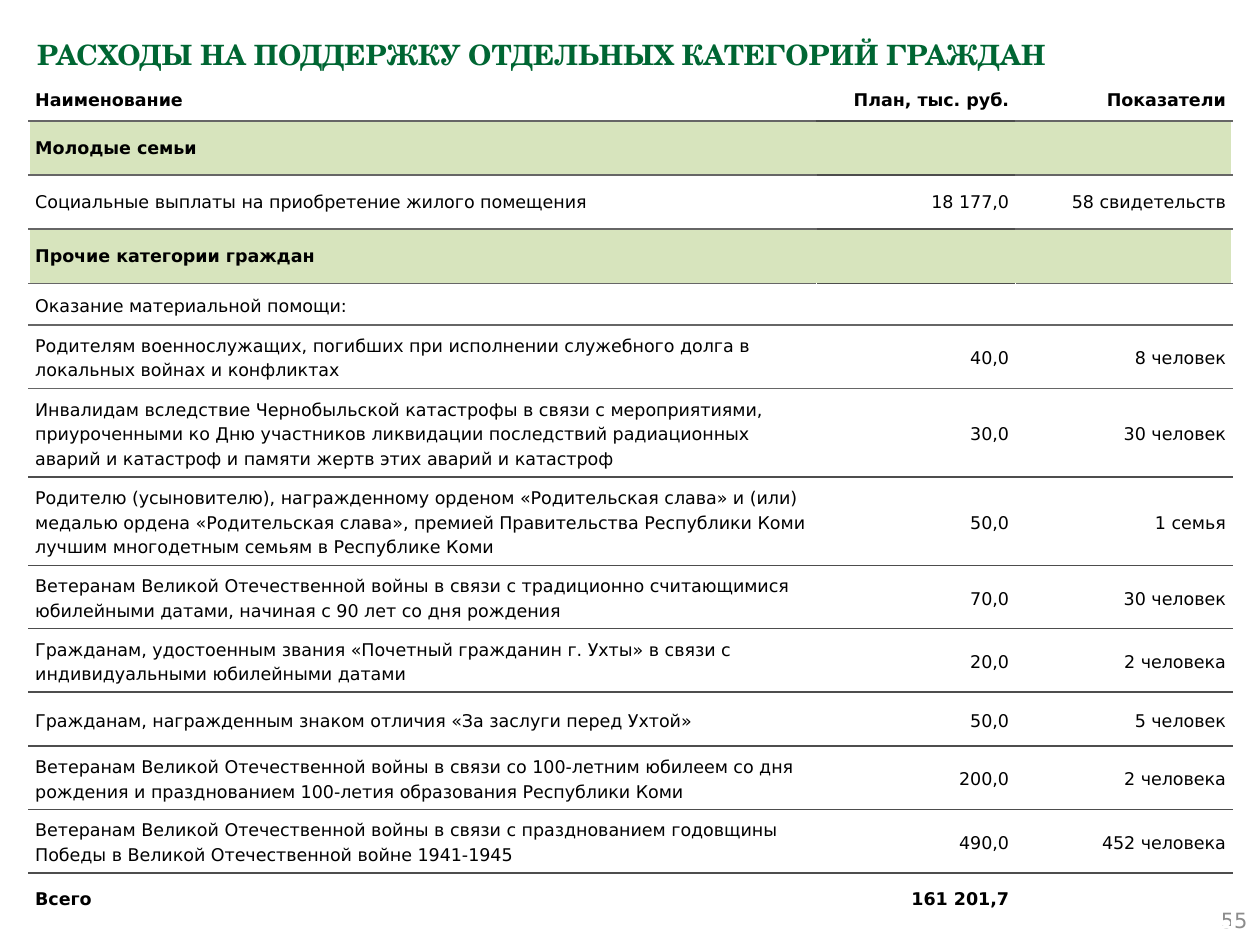
from dataclasses import dataclass
from typing import Optional

import pptx
import pptx.dml.color
import pptx.enum.text
import pptx.util
from lxml import etree
from pptx.oxml.ns import qn

Cm, Pt = pptx.util.Cm, pptx.util.Pt
ALIGN, ANCHOR = pptx.enum.text.PP_ALIGN, pptx.enum.text.MSO_ANCHOR


@dataclass(frozen=True)
class Theme:
    title_font: str = "TeX Gyre Schola"
    body_font: str = "DejaVu Sans"
    title_size: int = 16
    body_size: int = 10
    number_size: int = 12
    green: str = "006633"
    black: str = "000000"
    number: str = "8C8C8C"
    section: str = "D7E4BD"
    white: str = "FFFFFF"
    rule: str = "666666"
    dark_rule: str = "4D4D4D"
    spacing: float = 1.2


@dataclass(frozen=True)
class Row:
    name: str
    plan: str = ""
    result: str = ""
    height: float = 1.09
    kind: str = "item"  # header, section, item, aid or total


THEME = Theme()
TWO_LINES, THREE_LINES = 1.24, 1.73
COLUMNS = (15.88, 4.01, 4.37)
ROWS = (
    Row("Наименование", "План, тыс. руб.", "Показатели", 0.74, "header"),
    Row("Молодые семьи", kind="section"),
    Row("Социальные выплаты на приобретение жилого помещения",
        "18 177,0", "58 свидетельств"),
    Row("Прочие категории граждан", kind="section"),
    Row("Оказание материальной помощи:", height=0.84, kind="aid"),
    Row("Родителям военнослужащих, погибших при исполнении служебного долга в "
        "локальных войнах и конфликтах",
        "40,0", "8 человек", TWO_LINES, "aid"),
    Row("Инвалидам вследствие Чернобыльской катастрофы в связи с мероприятиями, "
        "приуроченными ко Дню участников ликвидации последствий радиационных "
        "аварий и катастроф и памяти жертв этих аварий и катастроф",
        "30,0", "30 человек", THREE_LINES, "aid"),
    Row("Родителю (усыновителю), награжденному орденом «Родительская слава» и (или) "
        "медалью ордена «Родительская слава», премией Правительства Республики Коми "
        "лучшим многодетным семьям в Республике Коми",
        "50,0", "1 семья", THREE_LINES, "aid"),
    Row("Ветеранам Великой Отечественной войны в связи с традиционно считающимися "
        "юбилейными датами, начиная с 90 лет со дня рождения",
        "70,0", "30 человек", TWO_LINES, "aid"),
    Row("Гражданам, удостоенным звания «Почетный гражданин г. Ухты» в связи с "
        "индивидуальными юбилейными датами",
        "20,0", "2 человека", TWO_LINES, "aid"),
    Row("Гражданам, награжденным знаком отличия «За заслуги перед Ухтой»",
        "50,0", "5 человек", kind="aid"),
    Row("Ветеранам Великой Отечественной войны в связи со 100-летним юбилеем со дня "
        "рождения и празднованием 100-летия образования Республики Коми",
        "200,0", "2 человека", TWO_LINES, "aid"),
    Row("Ветеранам Великой Отечественной войны в связи с празднованием годовщины "
        "Победы в Великой Отечественной войне 1941-1945",
        "490,0", "452 человека", TWO_LINES, "aid"),
    Row("Всего", "161 201,7", kind="total"),
)


def rgb(color: str) -> pptx.dml.color.RGBColor:
    return pptx.dml.color.RGBColor.from_string(color)


def write(p, text: str, font: str, size: int, color: str, bold: bool = False) -> None:
    r = p.add_run()
    r.text = text
    r.font.name, r.font.size, r.font.bold = font, Pt(size), bold
    r.font.color.rgb = rgb(color)


def add_text(s, box: tuple[float, ...], anchor):
    tf = s.shapes.add_textbox(*map(Cm, box)).text_frame
    tf.word_wrap = True
    tf.vertical_anchor = anchor
    return tf.paragraphs[0]


def set_border(cell, side: str, color: Optional[str]) -> None:
    ln = etree.SubElement(cell._tc.get_or_add_tcPr(), qn(f"a:ln{side}"), w=str(Pt(1)))
    if color is None:
        etree.SubElement(ln, qn("a:noFill"))
    else:
        fill = etree.SubElement(ln, qn("a:solidFill"))
        etree.SubElement(fill, qn("a:srgbClr"), val=color)


def rule_color(i: int, col: int) -> str:
    """Colour of the line below row i; the outer edges are white."""
    if i in (-1, len(ROWS) - 1):
        return THEME.white
    if i > 5 or (col == 1 and i < 4):
        return THEME.dark_rule
    return THEME.rule


def fill_cell(cell, i: int, col: int, text: str) -> None:
    row = ROWS[i]
    last = len(COLUMNS) - 1
    joined = row.kind in ("section", "item")
    # Borders come before the fill
    set_border(cell, "L", None if joined and col > 0 else THEME.white)
    set_border(cell, "R", None if joined and col < last else THEME.white)
    set_border(cell, "T", rule_color(i - 1, col))
    set_border(cell, "B", rule_color(i, col))
    if row.kind == "section":
        cell.fill.solid()
        cell.fill.fore_color.rgb = rgb(THEME.section)
    else:
        cell.fill.background()
    # Text
    cell.margin_left = cell.margin_right = Cm(0.13)
    cell.margin_top = cell.margin_bottom = Cm(0.13)
    cell.vertical_anchor = ANCHOR.TOP if row.kind == "header" else ANCHOR.MIDDLE
    p = cell.text_frame.paragraphs[0]
    p.alignment = ALIGN.RIGHT if col else ALIGN.LEFT
    if row.kind == "aid":
        p.line_spacing = THEME.spacing
    if text:
        write(p, text, THEME.body_font, THEME.body_size, THEME.black,
              row.kind in ("header", "section", "total"))
    else:
        # An empty cell must not stretch its row
        etree.SubElement(p._p, qn("a:endParaRPr"), sz=str(THEME.body_size * 100))


def add_expenses(s) -> None:
    heights = [row.height for row in ROWS]
    table = s.shapes.add_table(len(ROWS), len(COLUMNS), Cm(0.58), Cm(1.7),
                               Cm(sum(COLUMNS)), Cm(sum(heights))).table
    table.first_row = table.horz_banding = False
    for column, width in zip(table.columns, COLUMNS):
        column.width = Cm(width)
    for i, row in enumerate(ROWS):
        table.rows[i].height = Cm(row.height)
        for col, text in enumerate((row.name, row.plan, row.result)):
            fill_cell(table.cell(i, col), i, col, text)


def main() -> None:
    prs = pptx.Presentation()
    prs.slide_width, prs.slide_height = Cm(25.4), Cm(19.05)
    s = prs.slides.add_slide(prs.slide_layouts[6])

    # Title
    p = add_text(s, (0.5, 0.5, 24.4, 2), ANCHOR.TOP)
    p.line_spacing = THEME.spacing
    write(p, "РАСХОДЫ НА ПОДДЕРЖКУ ОТДЕЛЬНЫХ КАТЕГОРИЙ ГРАЖДАН",
          THEME.title_font, THEME.title_size, THEME.green, True)

    # Slide number
    p = add_text(s, (19.48, 18.03, 5.92, 1.02), ANCHOR.MIDDLE)
    p.alignment = ALIGN.RIGHT
    write(p, "55", THEME.body_font, THEME.number_size, THEME.number)

    # Expenses table
    add_expenses(s)
    prs.save("out.pptx")


if __name__ == "__main__":
    main()
